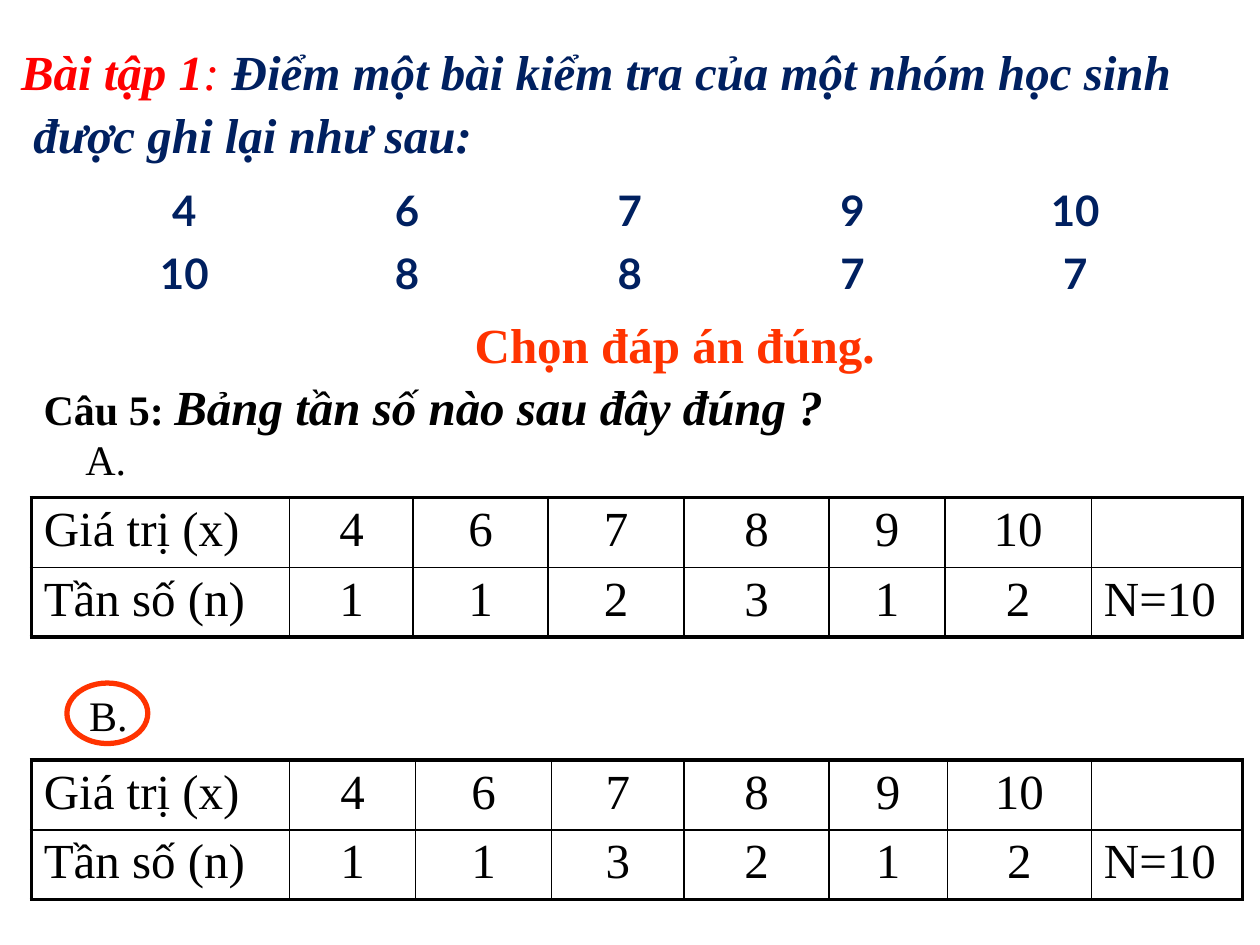
from lxml import etree
from pptx import Presentation
from pptx.dml.color import RGBColor
from pptx.enum.shapes import MSO_SHAPE
from pptx.enum.text import MSO_ANCHOR, PP_ALIGN
from pptx.oxml.ns import qn
from pptx.util import Cm, Pt

RED = RGBColor(0xFF, 0x00, 0x00)
NAVY = RGBColor(0x00, 0x20, 0x60)
ORANGE = RGBColor(0xFF, 0x33, 0x00)
BLACK = RGBColor(0x00, 0x00, 0x00)
SERIF = "Times New Roman"
CENTER, LEFT = PP_ALIGN.CENTER, PP_ALIGN.LEFT
TOP = MSO_ANCHOR.TOP
OVAL = MSO_SHAPE.OVAL
THICK, THIN = Pt(2.25), Pt(1)


def style_font(font, size, color, bold=False, italic=False, name=SERIF):
    font.name, font.size = name, Pt(size)
    font.bold, font.italic = bold, italic
    font.color.rgb = color


def add_line(left, top, width, height):
    """Add a wrapping text box and return its first paragraph."""
    frame = slide.shapes.add_textbox(Cm(left), Cm(top), Cm(width), Cm(height)).text_frame
    frame.word_wrap = True
    return frame.paragraphs[0]


prs = Presentation()
prs.slide_width, prs.slide_height = Cm(25.4), Cm(19.05)
slide = prs.slides.add_slide(prs.slide_layouts[1])
title, exercise = slide.placeholders
title.element.getparent().remove(title.element)

# Exercise statement
exercise.left, exercise.top = Cm(-0.08), Cm(0.84)
exercise.width, exercise.height = Cm(25.48), Cm(2.34)
exercise.text_frame.vertical_anchor = TOP
statement = [
    (0.25, [("Bài tập 1", RED, True), (": ", RED, False),
            ("Điểm một bài kiểm tra của một nhóm học sinh", NAVY, True)]),
    (0.5, [("được ghi lại như sau:", NAVY, True)]),
]
for i, (indent, pieces) in enumerate(statement):
    frame = exercise.text_frame
    paragraph = frame.add_paragraph() if i else frame.paragraphs[0]
    paragraph.line_spacing, paragraph.space_before = 0.9, Pt(5.6)
    properties = paragraph._p.get_or_add_pPr()
    properties.set("marL", str(Cm(indent)))
    properties.set("indent", "0")
    etree.SubElement(properties, qn("a:buNone"))
    for text, color, bold in pieces:
        run = paragraph.add_run()
        run.text = text
        style_font(run.font, 28, color, bold, italic=True)

# Raw scores
scores = [["4", "6", "7", "9", "10"], ["10", "8", "8", "7", "7"]]
score_table = slide.shapes.add_table(2, 5, Cm(1.47), Cm(3.61), Cm(22.45), Cm(2.54)).table
score_table.first_row = score_table.horz_banding = False
for r, row in enumerate(scores):
    for c, score in enumerate(row):
        cell = score_table.cell(r, c)
        cell.fill.background()
        cell.text = score
        paragraph = cell.text_frame.paragraphs[0]
        paragraph.alignment = CENTER
        style_font(paragraph.font, 24, NAVY, bold=True, name="Lato")

# Instruction
instruction = add_line(8.05, 6.35, 9.93, 1.27)
instruction.text = "Chọn đáp án đúng."
instruction.line_spacing, instruction.space_before = 0.9, Pt(5.6)
instruction._p.get_or_add_pPr().set("marL", str(Cm(1.27)))
style_font(instruction.font, 28, ORANGE, bold=True)

# Ring around the right answer
ring = slide.shapes.add_shape(OVAL, Cm(1.35), Cm(13.77), Cm(1.63), Cm(1.22))
ring.shadow.inherit = False
ring.fill.background()
ring.line.color.rgb = ORANGE
ring.line.width = Pt(3)

# Answers: label position, table top, column widths, frequencies
answers = [
    ("A.", 1.47, 8.61, 10.03, [5.21, 2.49, 2.72, 2.74, 2.92, 2.34, 2.95, 3.05],
     ["1", "1", "2", "3", "1", "2"]),
    ("B.", 1.55, 13.77, 15.32, [5.21, 2.54, 2.74, 2.67, 2.92, 2.39, 2.9, 3.05],
     ["1", "1", "3", "2", "1", "2"]),
]
values = ["Giá trị (x)", "4", "6", "7", "8", "9", "10", ""]
last = len(values) - 1
for label, label_left, label_top, table_top, widths, counts in answers:
    option = add_line(label_left, label_top, 2.84, 1.27)
    option.text = label
    style_font(option.font, 24, BLACK)

    frequencies = slide.shapes.add_table(
        2, len(values), Cm(0.63), Cm(table_top), Cm(sum(widths)), Cm(2.7)).table
    frequencies.first_row = frequencies.horz_banding = False
    for column, width in zip(frequencies.columns, widths):
        column.width = Cm(width)
    for r, row in enumerate([values, ["Tần số (n)", *counts, "N=10"]]):
        for c, text in enumerate(row):
            cell = frequencies.cell(r, c)
            cell.margin_top = cell.margin_bottom = Cm(0.11)
            cell.text = text
            paragraph = cell.text_frame.paragraphs[0]
            paragraph.alignment = CENTER if 0 < c < last else LEFT
            style_font(paragraph.font, 28, BLACK)
            # Thick outer frame, thin inner rules
            outer = {"lnL": c == 0, "lnR": c == last, "lnT": r == 0, "lnB": r == 1}
            for side, is_outer in outer.items():
                border = etree.SubElement(cell._tc.get_or_add_tcPr(), qn(f"a:{side}"),
                                          w=str(THICK if is_outer else THIN))
                fill = etree.SubElement(border, qn("a:solidFill"))
                etree.SubElement(fill, qn("a:srgbClr"), val=str(BLACK))
            cell.fill.background()

# Question
question = add_line(0.63, 7.47, 24.33, 1.45)
for text, size, italic in [("Câu 5: ", 24, False),
                           ("Bảng tần số nào sau đây đúng ?", 28, True)]:
    run = question.add_run()
    run.text = text
    style_font(run.font, size, BLACK, bold=True, italic=italic)

prs.save("out.pptx")
